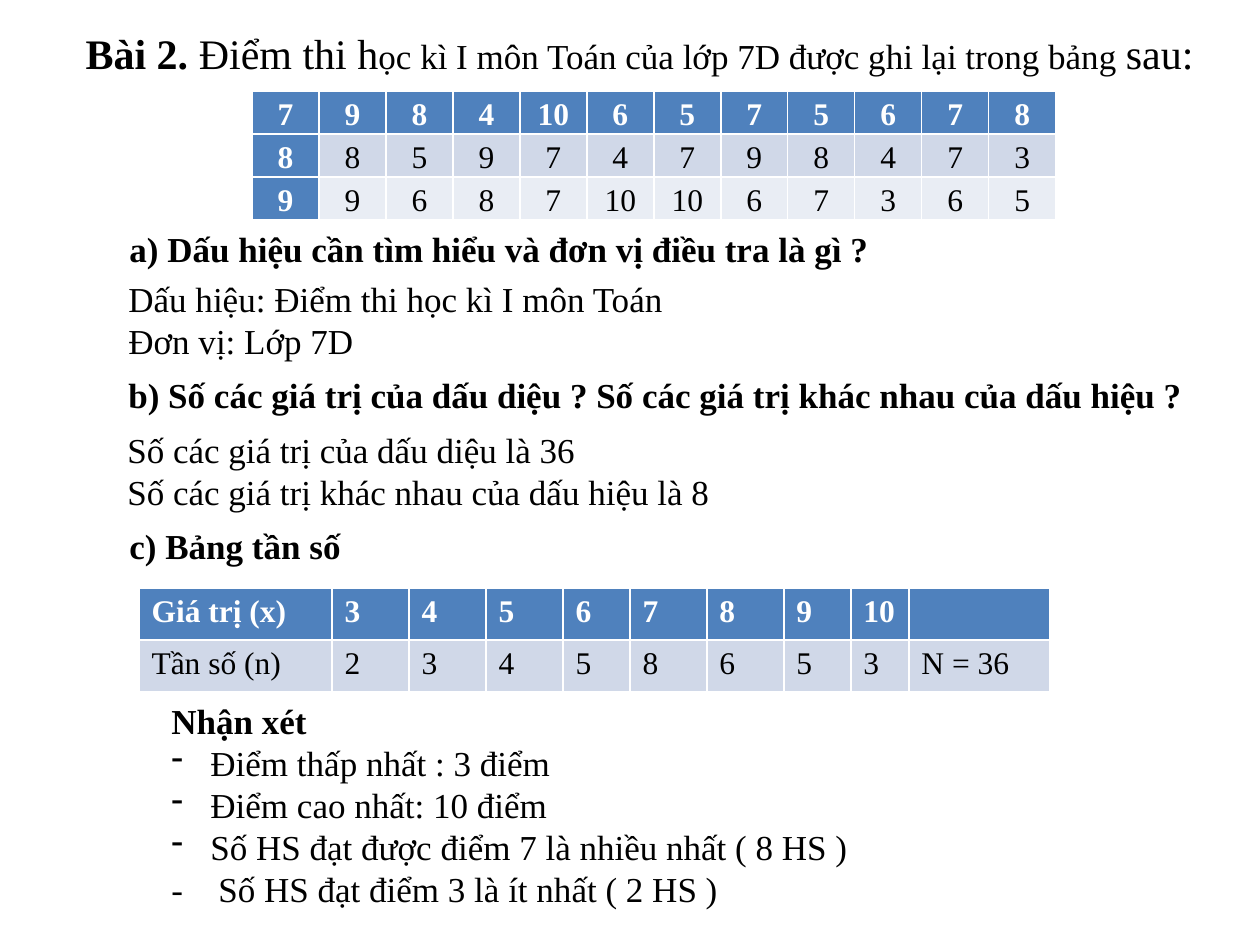
"""Build a maths exercise slide about exam scores with a data table and a frequency table."""
from lxml import etree
from pptx import Presentation
from pptx import util as u
from pptx.dml.color import RGBColor
from pptx.enum import text
from pptx.oxml import ns

PX = 914400 // 126
FONT = "Times New Roman"
BLACK = RGBColor(0x00, 0x00, 0x00)
WHITE = RGBColor(0xFF, 0xFF, 0xFF)
BLUE = RGBColor(0x4F, 0x81, 0xBD)
BANDS = [RGBColor(0xE9, 0xED, 0xF4), RGBColor(0xD0, 0xD8, 0xE8)]


def style(p, size, bold=False, color=BLACK):
    for r in p.runs:
        r.font.name = FONT
        r.font.size = u.Pt(size)
        r.font.bold = bold
        r.font.color.rgb = color


def add_grid(s, rows, x, y, widths, row_height, first_col):
    frame = s.shapes.add_table(len(rows), len(widths), x * PX, y * PX,
                               sum(widths) * PX, len(rows) * row_height * PX)
    table = frame.table
    table.first_col = first_col
    for column, width in zip(table.columns, widths):
        column.width = width * PX
    for i, row in enumerate(rows):
        table.rows[i].height = row_height * PX
        for j, value in enumerate(row):
            cell = table.cell(i, j)
            head = i == 0 or (first_col and j == 0)
            cell.fill.solid()
            cell.fill.fore_color.rgb = BLUE if head else BANDS[i % 2]
            cell.text_frame.text = value
            style(cell.text_frame.paragraphs[0], 18, head, WHITE if head else BLACK)
    return table


prs = Presentation()
prs.slide_width, prs.slide_height = 1260 * PX, 945 * PX
s = prs.slides.add_slide(prs.slide_layouts[5])

title = s.shapes.title
title.left, title.top, title.width, title.height = 73 * PX, 21 * PX, 1155 * PX, 63 * PX
tf = title.text_frame
tf.auto_size = text.MSO_AUTO_SIZE.NONE
tf.vertical_anchor = text.MSO_ANCHOR.TOP
p = tf.paragraphs[0]
p.alignment = text.PP_ALIGN.LEFT
for words in ["Bài 2. ", "Điểm thi h",
              "ọc kì I môn Toán của lớp 7D được ghi lại trong bảng ", "sau:"]:
    p.add_run().text = words
style(p, 24)
p.runs[0].font.bold = True
p.runs[2].font.size = u.Pt(20)

scores = ["7 9 8 4 10 6 5 7 5 6 7 8", "8 8 5 9 7 4 7 9 8 4 7 3", "9 9 6 8 7 10 10 6 7 3 6 5"]
table = add_grid(s, [row.split() for row in scores], 252, 91, [67] * 12, 43, True)
for cell in table.iter_cells():
    cell.margin_left = cell.margin_right = 9 * PX
    cell.margin_top = cell.margin_bottom = 0
    cell.vertical_anchor = text.MSO_ANCHOR.MIDDLE
    p = cell.text_frame.paragraphs[0]
    p.alignment = text.PP_ALIGN.CENTER
    p.line_spacing = 1.15

frequencies = [["Giá trị (x)", "3", "4", "5", "6", "7", "8", "9", "10", ""],
               ["Tần số (n)", "2", "3", "4", "5", "8", "6", "5", "3", "N = 36"]]
add_grid(s, frequencies, 139, 588, [193, 77, 77, 77, 67, 77, 77, 67, 58, 141], 52, False)

blocks = [
    (117, 221, 770, 55, True, True, ["a) Dấu hiệu cần tìm hiểu và đơn vị điều tra là gì ?"]),
    (116, 271, 954, 97, False, False,
     ["Dấu hiệu: Điểm thi học kì I môn Toán", "Đơn vị: Lớp 7D"]),
    (116, 367, 1087, 55, True, True,
     ["b) Số các giá trị của dấu diệu ? Số các giá trị khác nhau của dấu hiệu ?"]),
    (115, 422, 683, 97, False, False,
     ["Số các giá trị của dấu diệu là 36", "Số các giá trị khác nhau của dấu hiệu là 8"]),
    (117, 518, 238, 55, True, True, ["c) Bảng tần số"]),
    (159, 693, 716, 267, True, True,
     ["Nhận xét", "Điểm thấp nhất : 3 điểm", "Điểm cao nhất: 10 điểm",
      "Số HS đạt được điểm 7 là nhiều nhất ( 8 HS )",
      "-\tSố HS đạt điểm 3 là ít nhất ( 2 HS )"]),
]
for x, y, width, height, bold, one_line, lines in blocks:
    tf = s.shapes.add_textbox(x * PX, y * PX, width * PX, height * PX).text_frame
    tf.word_wrap = not one_line
    tf.text = "\n".join(lines)
    for i, p in enumerate(tf.paragraphs):
        style(p, 20, bold and i == 0)

for p, indent in zip(tf.paragraphs[1:], [39, 39, 39, 47]):
    pPr = p._p.get_or_add_pPr()
    pPr.set("marL", str(indent * PX))
    pPr.set("indent", str(-indent * PX))
    if not p.text.startswith("-"):
        etree.SubElement(pPr, ns.qn("a:buFontTx"))
        etree.SubElement(pPr, ns.qn("a:buChar")).set("char", "-")

prs.save("out.pptx")
